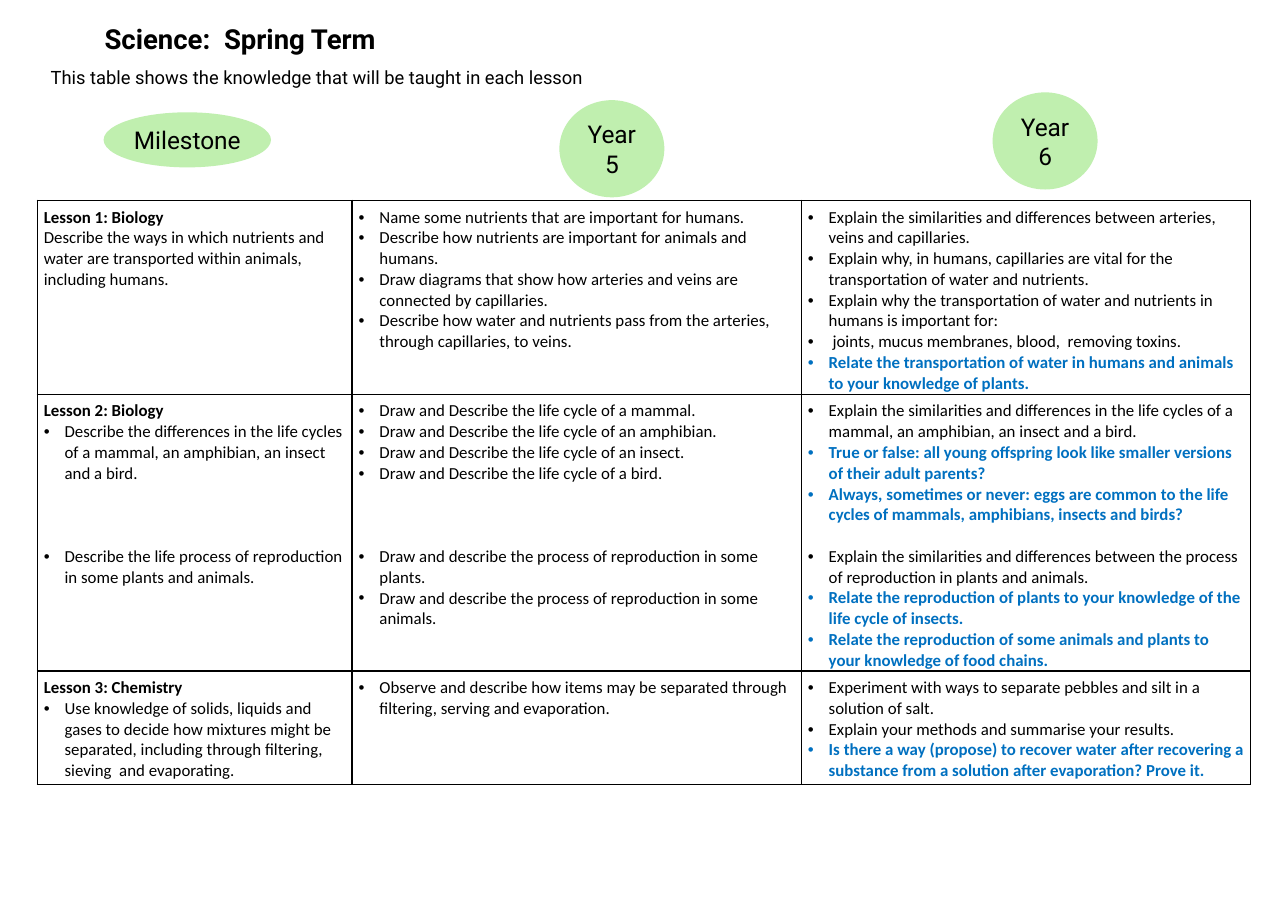
from lxml import etree
from pptx import Presentation
from pptx.dml.color import RGBColor
from pptx.enum.shapes import MSO_SHAPE
from pptx.enum.text import MSO_ANCHOR, MSO_AUTO_SIZE, PP_ALIGN
from pptx.oxml.ns import qn
from pptx.util import Cm, Pt

BLACK = RGBColor(0x00, 0x00, 0x00)
WHITE = RGBColor(0xFF, 0xFF, 0xFF)
GREEN = RGBColor(0xC0, 0xEF, 0xAF)
BLUE = RGBColor(0x00, 0x70, 0xC0)
OVAL = MSO_SHAPE.OVAL
MIDDLE = MSO_ANCHOR.MIDDLE
LEFT, CENTER = PP_ALIGN.LEFT, PP_ALIGN.CENTER
FIXED = MSO_AUTO_SIZE.NONE

LINE = 13.6  # height of one table line in points
WIDTHS = (7.26, 10.36, 10.36)
HEIGHTS = (4.47, 6.33, 2.61)

# Format of each kind of table paragraph
KINDS = {
    "head": dict(bold=True),
    "plain": dict(),
    "item": dict(bullet=True),
    "ask": dict(bullet=True, bold=True, color=BLUE),
}

# Rows of cells; a paragraph is kind, words and, if any, lines left free above
LESSONS = [
    [
        [("head", "Lesson 1: Biology"),
         ("plain", "Describe the ways in which nutrients and water are transported "
                   "within animals, including humans.")],
        [("item", "Name some nutrients that are important for humans."),
         ("item", "Describe how nutrients are important for animals and humans."),
         ("item", "Draw diagrams that show how arteries and veins are connected "
                  "by capillaries."),
         ("item", "Describe how water and nutrients pass from the arteries, "
                  "through capillaries, to veins.")],
        [("item", "Explain the similarities and differences between arteries, "
                  "veins and capillaries."),
         ("item", "Explain why, in humans, capillaries are vital for the "
                  "transportation of water and nutrients."),
         ("item", "Explain why the transportation of water and nutrients in "
                  "humans is important for:"),
         ("item", " joints, mucus membranes, blood,  removing toxins."),
         ("ask", "Relate the transportation of water in humans and animals to "
                 "your knowledge of plants.")],
    ],
    [
        [("head", "Lesson 2: Biology"),
         ("item", "Describe the differences in the life cycles of a mammal, "
                  "an amphibian, an insect and a bird."),
         ("item", "Describe the life process of reproduction in some plants "
                  "and animals.", 3)],
        [("item", "Draw and Describe the life cycle of a mammal."),
         ("item", "Draw and Describe the life cycle of an amphibian."),
         ("item", "Draw and Describe the life cycle of an insect."),
         ("item", "Draw and Describe the life cycle of a bird."),
         ("item", "Draw and describe the process of reproduction in some plants.", 3),
         ("item", "Draw and describe the process of reproduction in some animals.")],
        [("item", "Explain the similarities and differences in the life cycles of "
                  "a mammal, an amphibian, an insect and a bird."),
         ("ask", "True or false: all young offspring look like smaller versions "
                 "of their adult parents?"),
         ("ask", "Always, sometimes or never: eggs are common to the life cycles "
                 "of mammals, amphibians, insects and birds?"),
         ("item", "Explain the similarities and differences between the process "
                  "of reproduction in plants and animals.", 1),
         ("ask", "Relate the reproduction of plants to your knowledge of the life "
                 "cycle of insects."),
         ("ask", "Relate the reproduction of some animals and plants to your "
                 "knowledge of food chains.")],
    ],
    [
        [("head", "Lesson 3: Chemistry"),
         ("item", "Use knowledge of solids, liquids and gases to decide how "
                  "mixtures might be separated, including through filtering, "
                  "sieving  and evaporating.")],
        [("item", "Observe and describe how items may be separated through "
                  "filtering, serving and evaporation.")],
        [("item", "Experiment with ways to separate pebbles and silt in a "
                  "solution of salt."),
         ("item", "Explain your methods and summarise your results."),
         ("ask", "Is there a way (propose) to recover water after recovering a "
                 "substance from a solution after evaporation? Prove it.")],
    ],
]


def write(para, words, size=11, font="Calibri", color=BLACK, bold=False,
          align=LEFT, before=0, bullet=False):
    """Put formatted words into a paragraph."""
    run = para.add_run()
    run.text = words
    run.font.size, run.font.name, run.font.bold = Pt(size), font, bold
    run.font.color.rgb = color
    para.alignment = align
    para.space_before = Pt(before)
    if bullet:
        props = para._p.get_or_add_pPr()
        props.set("marL", str(Cm(0.48)))
        props.set("indent", str(-Cm(0.48)))
        etree.SubElement(props, qn("a:buFont")).set("typeface", "Arial")
        etree.SubElement(props, qn("a:buChar")).set("char", "•")


def frame(shape, wrap=True):
    """Set the small insets and middle anchor of a shape's text."""
    body = shape.text_frame
    body.auto_size = FIXED
    body.word_wrap = wrap
    body.vertical_anchor = MIDDLE
    body.margin_left = body.margin_right = Cm(0.1)
    body.margin_top = body.margin_bottom = Cm(0.1)
    return body.paragraphs[0]


def header(slide, left, top, width):
    # Title
    title = slide.shapes.title
    title.left, title.top = Cm(left + 1.24), Cm(top)
    title.width, title.height = Cm(7), Cm(1)
    write(frame(title, wrap=False), "Science:  Spring Term",
          size=18, font="Roboto", bold=True)
    # Line below the title
    intro = slide.shapes.add_textbox(Cm(left), Cm(top + 1.04), Cm(width), Cm(0.72))
    write(frame(intro), "This table shows the knowledge that will be taught in each lesson",
          size=12, font="Roboto")


def badge(slide, words, left, top, width, height):
    oval = slide.shapes.add_shape(OVAL, Cm(left), Cm(top), Cm(width), Cm(height))
    oval.shadow.inherit = False
    oval.fill.solid()
    oval.fill.fore_color.rgb = GREEN
    oval.line.fill.background()
    write(frame(oval), words, size=16, font="Roboto", align=CENTER)


def border(cell):
    props = cell._tc.get_or_add_tcPr()
    for side in ("lnL", "lnR", "lnT", "lnB"):
        line = etree.SubElement(props, qn("a:" + side), w=str(Pt(1)))
        fill = etree.SubElement(line, qn("a:solidFill"))
        etree.SubElement(fill, qn("a:srgbClr")).set("val", str(BLACK))


def fill_cell(cell, paras):
    border(cell)
    cell.fill.solid()
    cell.fill.fore_color.rgb = WHITE
    cell.margin_left = cell.margin_right = cell.margin_top = Cm(0.15)
    cell.margin_bottom = Cm(0)
    body = cell.text_frame
    for i, (kind, words, *gap) in enumerate(paras):
        para = body.add_paragraph() if i else body.paragraphs[0]
        write(para, words, before=LINE * sum(gap), **KINDS[kind])


def lessons(slide, left, top):
    grid = slide.shapes.add_table(
        len(HEIGHTS), len(WIDTHS), Cm(left), Cm(top),
        Cm(sum(WIDTHS)), Cm(sum(HEIGHTS))).table
    grid.first_row = grid.horz_banding = False
    for col, width in zip(grid.columns, WIDTHS):
        col.width = Cm(width)
    for row, height, cells in zip(grid.rows, HEIGHTS, LESSONS):
        row.height = Cm(height)
        for cell, paras in zip(row.cells, cells):
            fill_cell(cell, paras)


def main():
    deck = Presentation()
    deck.slide_width, deck.slide_height = Cm(29.7), Cm(20.98)
    slide = deck.slides.add_slide(deck.slide_layouts[5])
    header(slide, 1.07, 0.38, 26.5)
    lessons(slide, 0.86, 4.62)
    # Column labels
    badge(slide, "Year 6", 22.89, 2.13, 2.42, 2.24)
    badge(slide, "Year 5", 12.9, 2.31, 2.42, 2.24)
    badge(slide, "Milestone", 2.39, 2.59, 3.86, 1.27)
    deck.save("out.pptx")


if __name__ == "__main__":
    main()
